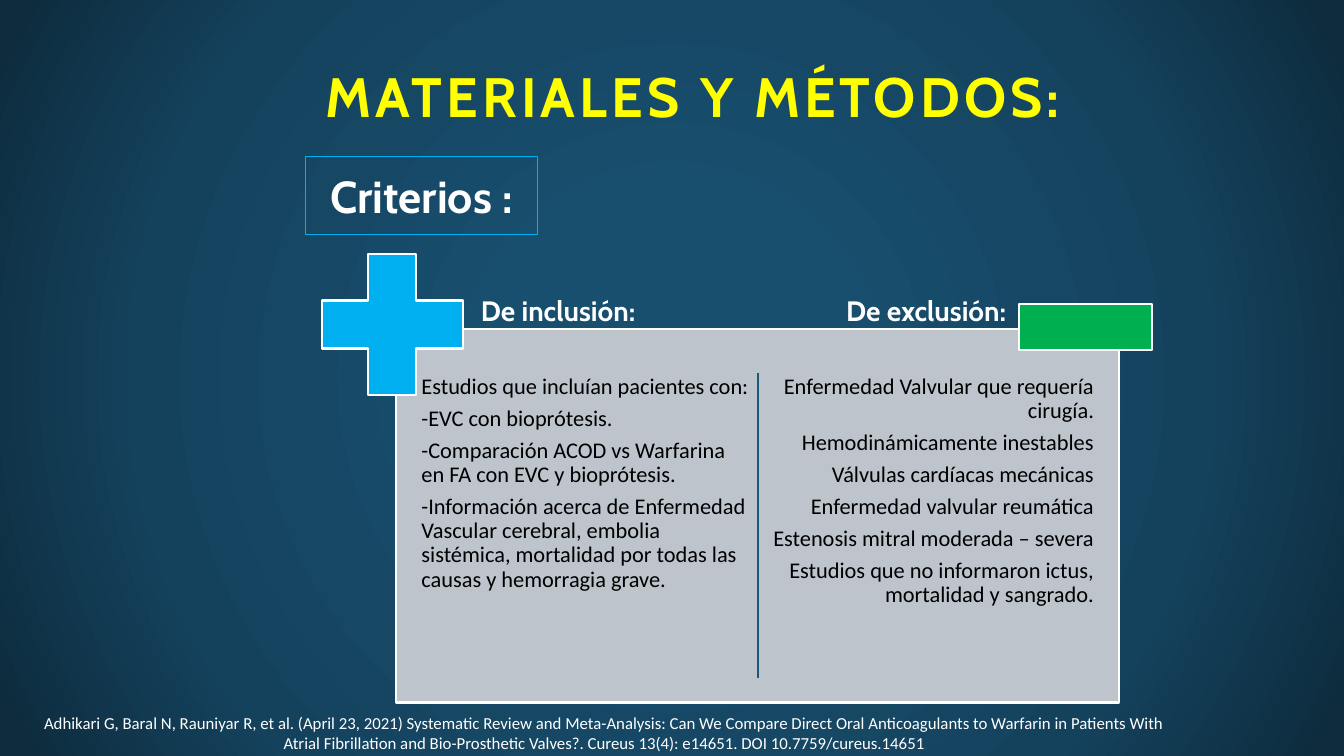
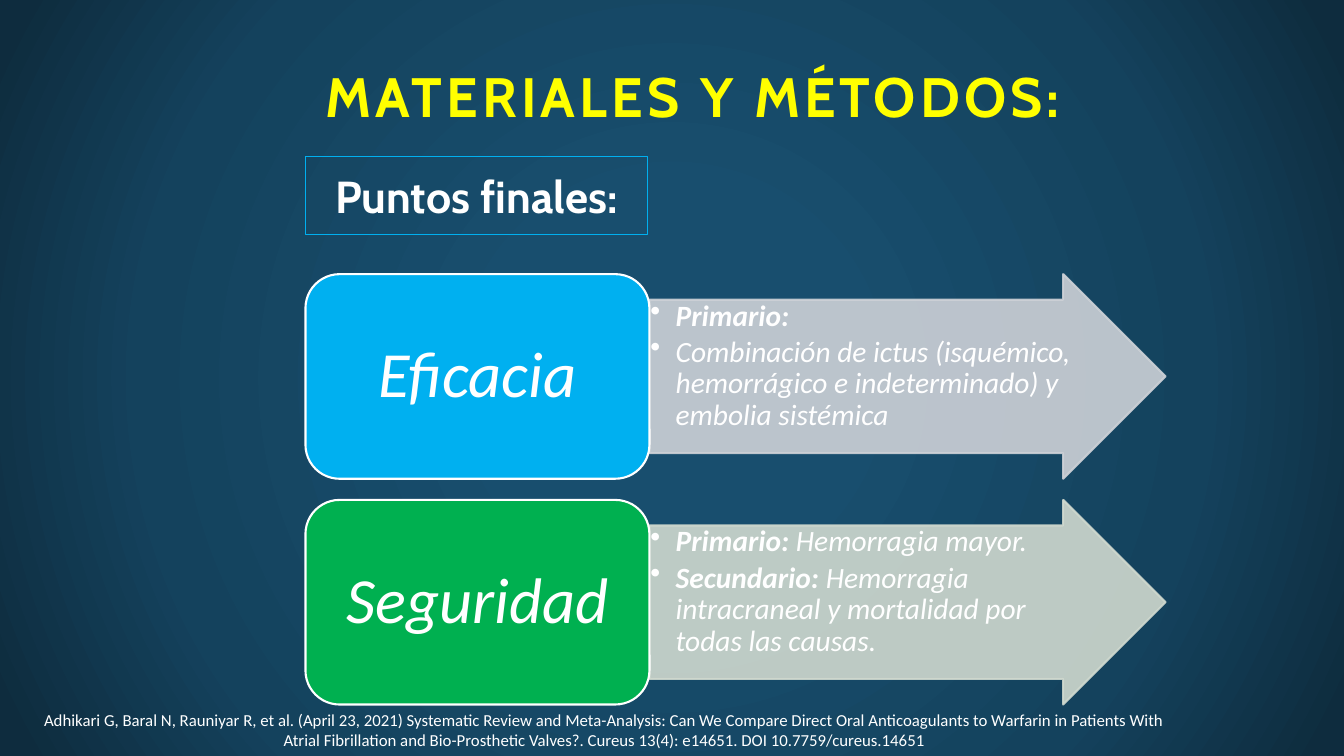
from lxml import etree
from pptx import Presentation
from pptx.dml.color import RGBColor
from pptx.enum import shapes, text
from pptx.oxml import parse_xml
from pptx.oxml.ns import nsdecls, qn
from pptx.util import Inches, Pt

WHITE, BLACK, YELLOW = "FFFFFF", "000000", "FFFF00"
BLUE, GREEN, NAVY, PANEL = "00B0F0", "00B050", "1B587C", "BDC4CC"
BLUE_TINT, GREEN_TINT = "CDD1D7", "D0D9CF"
BACKDROP = [(0, "184E6E"), (23, "184E6E"), (69, "14425D"), (97, "0E2C3E")]
HEAD, BODY = "Cabin", "Calibri"
LEFT, CENTER, RIGHT = text.PP_ALIGN.LEFT, text.PP_ALIGN.CENTER, text.PP_ALIGN.RIGHT
MIDDLE, TOP = text.MSO_ANCHOR.MIDDLE, text.MSO_ANCHOR.TOP
SHAPE = shapes.MSO_SHAPE

TITLE = "MATERIALES Y MÉTODOS:"
REFERENCE = (
    "Adhikari G, Baral N, Rauniyar R, et al. (April 23, 2021) Systematic Review and "
    "Meta-Analysis: Can We Compare Direct Oral Anticoagulants to Warfarin in Patients With "
    "Atrial Fibrillation and Bio-Prosthetic Valves?. Cureus 13(4): e14651. "
    "DOI 10.7759/cureus.14651")
INCLUSION = [
    "Estudios que incluían pacientes con:",
    "-EVC con bioprótesis.",
    "-Comparación ACOD vs Warfarina en FA con EVC y bioprótesis.",
    "-Información acerca de Enfermedad Vascular cerebral, embolia sistémica, "
    "mortalidad por todas las causas y hemorragia grave."]
EXCLUSION = [
    "Enfermedad Valvular que requería cirugía.",
    "Hemodinámicamente inestables",
    "Válvulas cardíacas mecánicas",
    "Enfermedad valvular reumática",
    "Estenosis mitral moderada – severa",
    "Estudios que no informaron ictus, mortalidad y sangrado."]
# Each paragraph is a list of (text, bold) runs.
ENDPOINTS = [
    ("Eficacia", BLUE, BLUE_TINT, [
        [("Primario:", True)],
        [("Combinación de ictus (isquémico, hemorrágico e indeterminado) y "
          "embolia sistémica", False)]]),
    ("Seguridad", GREEN, GREEN_TINT, [
        [("Primario: ", True), ("Hemorragia mayor.", False)],
        [("Secundario:", True),
         (" Hemorragia intracraneal y mortalidad por todas las causas.", False)]])]


def rgb(value):
    return RGBColor.from_string(value)


def apply(obj, formats):
    for name, value in formats.items():
        setattr(obj, name, value)


def set_bullet(p, char=None, indent=0):
    """Give the paragraph a hanging bullet, or none at all."""
    pPr = p._p.get_or_add_pPr()
    pPr.set("marL", str(Inches(indent)))
    pPr.set("indent", str(-Inches(indent)))
    bullet = etree.SubElement(pPr, qn("a:buChar" if char else "a:buNone"))
    if char:
        bullet.set("char", char)


def write(sp, paragraphs, size, font=BODY, color=WHITE, bold=False, italic=False,
          align=CENTER, anchor=TOP, margins=(0.1, 0.05), after=0, spacing=None,
          bullet=None, indent=0):
    """Fill a shape with paragraphs, each a string or a list of (text, bold) runs."""
    tf = sp.text_frame
    dx, dy = (Inches(m) for m in margins)
    apply(tf, dict(word_wrap=True, auto_size=text.MSO_AUTO_SIZE.NONE, vertical_anchor=anchor,
                   margin_left=dx, margin_right=dx, margin_top=dy, margin_bottom=dy))
    for i, content in enumerate(paragraphs):
        p = tf.paragraphs[0] if i == 0 else tf.add_paragraph()
        apply(p, dict(alignment=align, space_before=Pt(0), space_after=Pt(after),
                      line_spacing=spacing))
        set_bullet(p, bullet, indent)
        for words, heavy in [(content, bold)] if isinstance(content, str) else content:
            r = p.add_run()
            r.text = words
            apply(r.font, dict(size=Pt(size), name=font, bold=heavy, italic=italic))
            r.font.color.rgb = rgb(color)


def place(sp, box):
    apply(sp, dict(zip(("left", "top", "width", "height"), map(Inches, box))))


def add_box(s, kind, box, fill=None, line=WHITE, width=1.5, opacity=None, adjust=()):
    sp = s.shapes.add_shape(kind, *map(Inches, box))
    sp.shadow.inherit = False
    for i, value in enumerate(adjust):
        sp.adjustments[i] = value
    if fill:
        sp.fill.solid()
        sp.fill.fore_color.rgb = rgb(fill)
    else:
        sp.fill.background()
    sp.line.color.rgb = rgb(line)
    sp.line.width = Pt(width)
    if opacity:
        for clr in sp._element.spPr.iter(qn("a:srgbClr")):
            etree.SubElement(clr, qn("a:alpha")).set("val", str(opacity * 1000))
    return sp


def add_label(s, box, words, size, **formats):
    write(s.shapes.add_textbox(*map(Inches, box)), [words], size, **formats)


def set_backdrop(master):
    """Give the master its radial gradient."""
    master.background.fill.solid()
    solid = master.element.find(".//" + qn("p:bgPr"))[0]
    stops = "".join(f'<a:gs pos="{pos * 1000}"><a:srgbClr val="{color}"/></a:gs>'
                    for pos, color in BACKDROP)
    solid.getparent().replace(solid, parse_xml(
        f'<a:gradFill {nsdecls("a")} rotWithShape="1"><a:gsLst>{stops}</a:gsLst>'
        '<a:path path="circle"><a:fillToRect l="50000" t="50000" r="50000" b="50000"/>'
        '</a:path></a:gradFill>'))


def add_slide(prs, layout, heading, heading_width, reference_top):
    """Add a slide with the shared title, framed heading and reference."""
    s = prs.slides.add_slide(prs.slide_layouts.get_by_name(layout))
    title = s.shapes.title
    place(title, (2.81, 0.48, 8.13, 0.94))
    write(title, [TITLE], 39.6, HEAD, YELLOW, bold=True, anchor=MIDDLE)
    title.text_frame.paragraphs[0].runs[0].font._element.set("spc", "300")
    frame = add_box(s, SHAPE.RECTANGLE, (3.03, 1.55, heading_width, 0.78), line=BLUE, width=0.75)
    write(frame, [heading], 32, HEAD, bold=True, anchor=MIDDLE)
    add_label(s, (0.27, reference_top, 11.45, 0.5), REFERENCE, 12)
    return s


def add_criteria(s, box):
    """Panel with the two lists, their headings, and plus and minus signs."""
    x, y, w, h = box
    middle, list_w, gap = x + w / 2, 3.33, 0.07
    add_box(s, SHAPE.RECTANGLE, box, PANEL)
    columns = [(middle - gap / 2 - list_w, INCLUSION, LEFT),
               (middle + gap / 2, EXCLUSION, RIGHT)]
    for ph, (left, items, align) in zip(list(s.placeholders)[1:], columns):
        place(ph, (left, y + 0.43, list_w, 3.17))
        write(ph, items, 16, color=BLACK, align=align, margins=(0.03, 0.03),
              after=5.6, spacing=0.9)
        s.shapes._spTree.append(ph._element)  # in front of the panel
    add_box(s, SHAPE.CROSS, (x - 0.74, y - 0.74, 1.4, 1.4), BLUE, adjust=[0.33])
    add_box(s, SHAPE.RECTANGLE, (x + w - 0.99, y - 0.24, 1.32, 0.45), GREEN)
    divider = s.shapes.add_connector(
        shapes.MSO_CONNECTOR.STRAIGHT,
        *map(Inches, (middle, y + 0.44, middle, y + 3.47)))
    divider.line.color.rgb = rgb(NAVY)
    divider.line.width = Pt(1.5)
    etree.SubElement(divider._element.spPr, qn("a:effectLst"))
    for left, width, words, align in [(x + 0.74, 2.78, "De inclusión:", LEFT),
                                      (x + 3.52, 2.63, "De exclusión:", RIGHT)]:
        add_label(s, (left, y - 0.4, width, 0.44), words, 20, font=HEAD, bold=True, align=align)


def add_endpoint(s, box, name, color, tint, details):
    """Rounded name card followed by an arrow with the details."""
    x, y, w, h = box
    card_w = 0.4 * w
    arrow = add_box(s, SHAPE.RIGHT_ARROW, (x + card_w, y, w - card_w, h), tint, tint,
                    opacity=90, adjust=[0.75, 0.5])
    write(arrow, details, 21, italic=True, align=LEFT, margins=(0.01, 0.01),
          after=3.15, spacing=0.9, bullet="•", indent=0.25)
    card = add_box(s, SHAPE.ROUNDED_RECTANGLE, (x, y, card_w, h), color)
    write(card, [name], 46, italic=True, anchor=MIDDLE, margins=(0.19, 0.1),
          after=16.1, spacing=0.9)


def main():
    prs = Presentation()
    prs.slide_width, prs.slide_height = Inches(13.33), Inches(7.5)
    set_backdrop(prs.slide_master)

    s = add_slide(prs, "Two Content", "Criterios :", 2.3, 7.02)
    add_criteria(s, (3.93, 3.26, 7.17, 3.71))

    s = add_slide(prs, "Title Only", "Puntos finales:", 3.39, 6.99)
    for i, endpoint in enumerate(ENDPOINTS):
        add_endpoint(s, (3.03, 2.72 + i * 2.24, 8.53, 2.03), *endpoint)

    prs.save("out.pptx")


if __name__ == "__main__":
    main()
